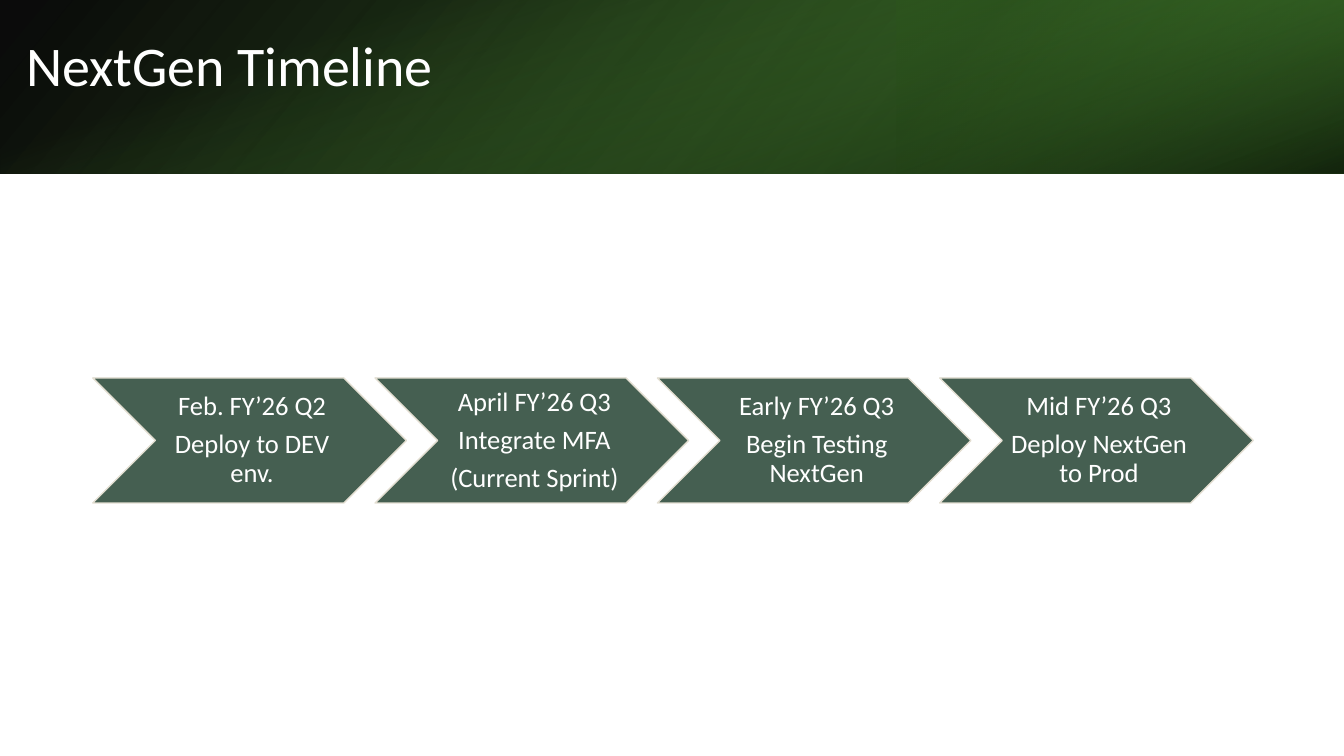
from lxml.etree import SubElement
from pptx import Presentation
from pptx.dml.color import RGBColor
from pptx.enum.shapes import MSO_SHAPE
from pptx.enum.text import MSO_ANCHOR, PP_ALIGN
from pptx.oxml.ns import qn
from pptx.util import Inches, Pt

STEPS = [
    ["Feb. FY’26 Q2", "Deploy to DEV env."],
    ["April FY’26 Q3", "Integrate MFA", "(Current Sprint)"],
    ["Early FY’26 Q3", "Begin Testing NextGen"],
    ["Mid FY’26 Q3", "Deploy NextGen to Prod"],
]
BANNER_HEIGHT = 1.72
SLIDE_WIDTH = 13.33


def color(hex_value):
    return RGBColor.from_string(hex_value)


def add_banner_layer(slide, box, stops, angle, rotation=0, flipped=False):
    layer = slide.shapes.add_shape(MSO_SHAPE.RECTANGLE, *map(Inches, box))
    layer.shadow.inherit = False
    layer.line.fill.background()
    layer.rotation = rotation
    properties = layer._element.spPr
    if flipped:
        properties.find(qn("a:xfrm")).set("flipH", "1")
    layer.fill.gradient()
    layer.fill.gradient_angle = 360 - angle
    for stop, (position, hex_value, _) in zip(layer.fill.gradient_stops, stops):
        stop.position = position / 100
        stop.color.rgb = color(hex_value)
    tints = properties.find(qn("a:gradFill")).iter(qn("a:srgbClr"))
    for tint, (_, _, opacity) in zip(tints, stops):
        SubElement(tint, qn("a:alpha")).set("val", str(opacity * 1000))


def add_banner(slide):
    add_banner_layer(slide, (0, 0, SLIDE_WIDTH, BANNER_HEIGHT),
                     [(0, "000000", 96), (100, "3F762B", 100)], 140, flipped=True)
    add_banner_layer(slide, (8.89, 0, 4.44, BANNER_HEIGHT),
                     [(19, "2A4F1C", 68), (100, "549E39", 79)], 320, 180, True)
    offset = (SLIDE_WIDTH - BANNER_HEIGHT) / 2
    add_banner_layer(slide, (offset, -offset, BANNER_HEIGHT, SLIDE_WIDTH),
                     [(23, "549E39", 0), (99, "000000", 74)], 340, 90)


def style_paragraph(paragraph, size):
    paragraph.line_spacing = 0.9
    paragraph.font.name = "Calibri"
    paragraph.font.size = Pt(size)
    paragraph.font.color.rgb = color("FFFFFF")


def add_title(slide, text):
    title = slide.shapes.add_textbox(Inches(0.16), Inches(0.2), Inches(12.58), Inches(0.96))
    frame = title.text_frame
    frame.word_wrap = True
    frame.vertical_anchor = MSO_ANCHOR.MIDDLE
    frame.text = text
    style_paragraph(frame.paragraphs[0], 40)


def add_step(slide, left, lines):
    step = slide.shapes.add_shape(MSO_SHAPE.CHEVRON, Inches(left), Inches(3.75),
                                  Inches(3.11), Inches(1.24))
    step.shadow.inherit = False
    step.fill.solid()
    step.fill.fore_color.rgb = color("455F51")
    step.line.color.rgb = color("E3DED1")
    step.line.width = Pt(1)
    frame = step.text_frame
    frame.word_wrap = True
    frame.vertical_anchor = MSO_ANCHOR.MIDDLE
    frame.margin_left = Inches(0.08)
    frame.margin_right = frame.margin_top = frame.margin_bottom = Inches(0.03)
    frame.text = "\n".join(lines)
    for paragraph in frame.paragraphs:
        paragraph.alignment = PP_ALIGN.CENTER
        paragraph.space_after = Pt(6.6)
        style_paragraph(paragraph, 19)


def main():
    presentation = Presentation()
    presentation.slide_width = Inches(SLIDE_WIDTH)
    presentation.slide_height = Inches(7.5)
    slide = presentation.slides.add_slide(presentation.slide_layouts[6])
    add_banner(slide)
    add_title(slide, "NextGen Timeline")
    for index, lines in enumerate(STEPS):
        add_step(slide, 0.92 + 2.8 * index, lines)
    presentation.save("out.pptx")


if __name__ == "__main__":
    main()
